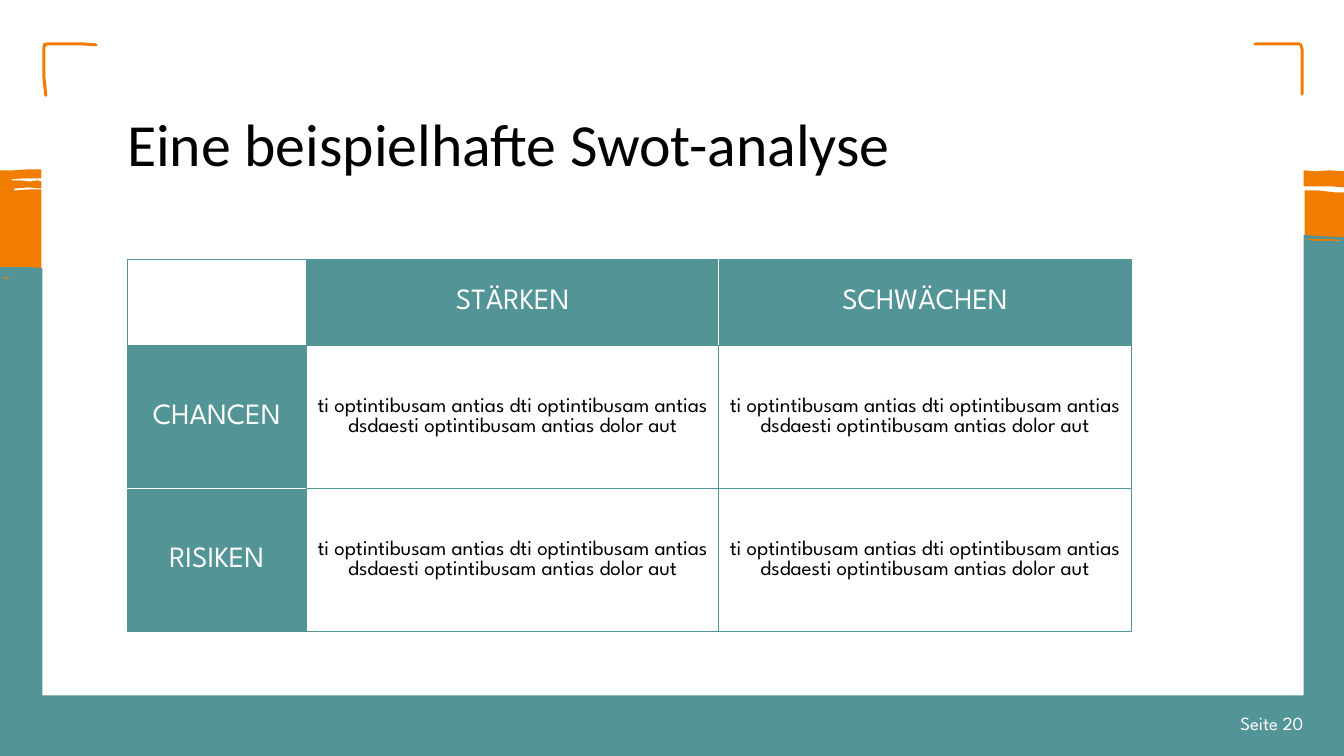
from lxml import etree
from pptx import Presentation
from pptx.dml.color import RGBColor
from pptx.enum import text
from pptx.oxml import ns
from pptx.util import Inches, Pt

TEAL = RGBColor(0x53, 0x95, 0x96)
ORANGE = RGBColor(0xF0, 0x7D, 0x00)
WHITE = RGBColor(0xFF, 0xFF, 0xFF)
BLACK = RGBColor(0x00, 0x00, 0x00)

BODY_FONT = "League Spartan"
SAMPLE = ("ti optintibusam antias dti optintibusam antias "
          "dsdaesti optintibusam antias dolor aut")
SWOT = [
    ["", "STÄRKEN", "SCHWÄCHEN"],
    ["CHANCEN", SAMPLE, SAMPLE],
    ["RISIKEN", SAMPLE, SAMPLE],
]
COLUMN_WIDTHS = [1.78, 4.09, 4.09]
ROW_HEIGHTS = [0.86, 1.42, 1.42]

# Brush outlines in inches
LEFT_CORNER = [
    (0.45, 0.96), (0.44, 0.95), (0.43, 0.86), (0.42, 0.76), (0.42, 0.47),
    (0.43, 0.43), (0.48, 0.42), (0.8, 0.42), (0.95, 0.43), (0.97, 0.45),
    (0.95, 0.46), (0.8, 0.45), (0.47, 0.45), (0.45, 0.47), (0.45, 0.76),
    (0.46, 0.85), (0.47, 0.95),
]
RIGHT_CORNER = [
    (12.91, 0.95), (12.9, 0.93), (12.9, 0.49), (12.89, 0.45), (12.45, 0.45),
    (12.43, 0.44), (12.45, 0.42), (12.88, 0.42), (12.91, 0.43),
    (12.93, 0.49), (12.93, 0.93),
]
LEFT_BRUSH = [
    (0.41, 1.77), (0.41, 1.68), (0.28, 1.68), (0.14, 1.69), (0, 1.69),
    (0, 4.91), (0.17, 4.9), (0.41, 4.87), (0.41, 1.88), (0.29, 1.88),
    (0.15, 1.89), (0.13, 1.88), (0.15, 1.87), (0.28, 1.86), (0.41, 1.87),
    (0.41, 1.8), (0.37, 1.79), (0.31, 1.8), (0.28, 1.8), (0.2, 1.79),
    (0.12, 1.79), (0.11, 1.78), (0.23, 1.77),
]
RIGHT_BRUSH_TOP = [
    (12.93, 1.69), (13.04, 1.7), (13.19, 1.69), (13.35, 1.7), (13.35, 1.86),
    (13.21, 1.85), (12.93, 1.85),
]
RIGHT_BRUSH = [
    (12.94, 1.89), (13.08, 1.89), (13.25, 1.91), (13.35, 1.91),
    (13.35, 4.42), (12.94, 4.43),
]
TEAL_FRAME = [
    (13.35, 7.51), (13.35, 2.35), (13.21, 2.35), (13.04, 2.34),
    (12.93, 2.33), (12.93, 2.37), (13.12, 2.37), (13.31, 2.38),
    (13.29, 2.39), (13.03, 2.39), (12.93, 2.37), (12.93, 6.9), (0.42, 6.9),
    (0.42, 2.66), (0.28, 2.65), (0, 2.65), (0, 2.76), (0.06, 2.75),
    (0.11, 2.77), (0, 2.76), (0, 7.51),
]


def add_brush(slide, outline, color):
    points = [(Inches(x), Inches(y)) for x, y in outline]
    builder = slide.shapes.build_freeform(*points[0])
    builder.add_line_segments(points[1:], close=True)
    brush = builder.convert_to_shape()
    brush.shadow.inherit = False
    brush.fill.solid()
    brush.fill.fore_color.rgb = color
    brush.line.fill.background()


def set_font(paragraph, name, size, color):
    paragraph.font.name = name
    paragraph.font.size = Pt(size)
    paragraph.font.color.rgb = color


def add_label(slide, wording, left, top, width, height):
    """Add a text box without insets; return its frame and paragraph."""
    box = slide.shapes.add_textbox(
        Inches(left), Inches(top), Inches(width), Inches(height))
    frame = box.text_frame
    frame.word_wrap = True
    frame.margin_left = frame.margin_right = 0
    frame.margin_top = frame.margin_bottom = 0
    paragraph = frame.paragraphs[0]
    paragraph.text = wording
    return frame, paragraph


def set_borders(cell, colors):
    """Draw the cell borders; colors run left, right, top, bottom."""
    properties = cell._tc.get_or_add_tcPr()
    for index, (side, color) in enumerate(zip("LRTB", colors)):
        line = etree.Element(ns.qn(f"a:ln{side}"), w=str(Pt(0.75)))
        fill = etree.SubElement(line, ns.qn("a:solidFill"))
        etree.SubElement(fill, ns.qn("a:srgbClr"), val=str(color))
        properties.insert(index, line)


def fill_cell(cell, wording, row, column):
    is_heading = (row == 0) != (column == 0)
    if is_heading:
        cell.fill.solid()
        cell.fill.fore_color.rgb = TEAL
    else:
        cell.fill.background()
    cell.vertical_anchor = text.MSO_ANCHOR.MIDDLE
    cell.margin_left = cell.margin_right = Inches(0.1)
    cell.margin_top = cell.margin_bottom = Inches(0.07)
    paragraph = cell.text_frame.paragraphs[0]
    paragraph.text = wording
    paragraph.alignment = text.PP_ALIGN.CENTER
    set_font(paragraph, BODY_FONT, 21 if is_heading else 15,
             WHITE if is_heading else BLACK)

    # White lines separate neighbouring headings
    set_borders(cell, [
        WHITE if (row, column) == (0, 2) else TEAL,
        WHITE if (row, column) == (0, 1) else TEAL,
        WHITE if (row, column) == (2, 0) else TEAL,
        WHITE if (row, column) == (1, 0) else TEAL,
    ])


def add_swot_table(slide):
    table = slide.shapes.add_table(
        len(SWOT), len(SWOT[0]), Inches(1.26), Inches(2.57),
        Inches(sum(COLUMN_WIDTHS)), Inches(sum(ROW_HEIGHTS))).table
    table.first_row = table.horz_banding = False
    for column, width in zip(table.columns, COLUMN_WIDTHS):
        column.width = Inches(width)
    for row, height in zip(table.rows, ROW_HEIGHTS):
        row.height = Inches(height)
    for row, wordings in enumerate(SWOT):
        for column, wording in enumerate(wordings):
            fill_cell(table.cell(row, column), wording, row, column)


def main():
    deck = Presentation()
    deck.slide_width, deck.slide_height = Inches(13.33), Inches(7.5)
    slide = deck.slides.add_slide(deck.slide_layouts[6])

    for outline in (LEFT_CORNER, RIGHT_CORNER, LEFT_BRUSH,
                    RIGHT_BRUSH_TOP, RIGHT_BRUSH):
        add_brush(slide, outline, ORANGE)
    add_brush(slide, TEAL_FRAME, TEAL)

    _, title = add_label(slide, "Eine beispielhafte Swot-analyse",
                         1.26, 1.17, 10.81, 1.31)
    title.line_spacing = 0.85
    set_font(title, "Calibri", 42.7, BLACK)

    add_swot_table(slide)

    page_frame, page = add_label(slide, "Seite 20", 12.07, 7.03, 0.86, 0.29)
    page_frame.vertical_anchor = text.MSO_ANCHOR.MIDDLE
    page.alignment = text.PP_ALIGN.RIGHT
    set_font(page, BODY_FONT, 13.3, WHITE)

    deck.save("out.pptx")


if __name__ == "__main__":
    main()
